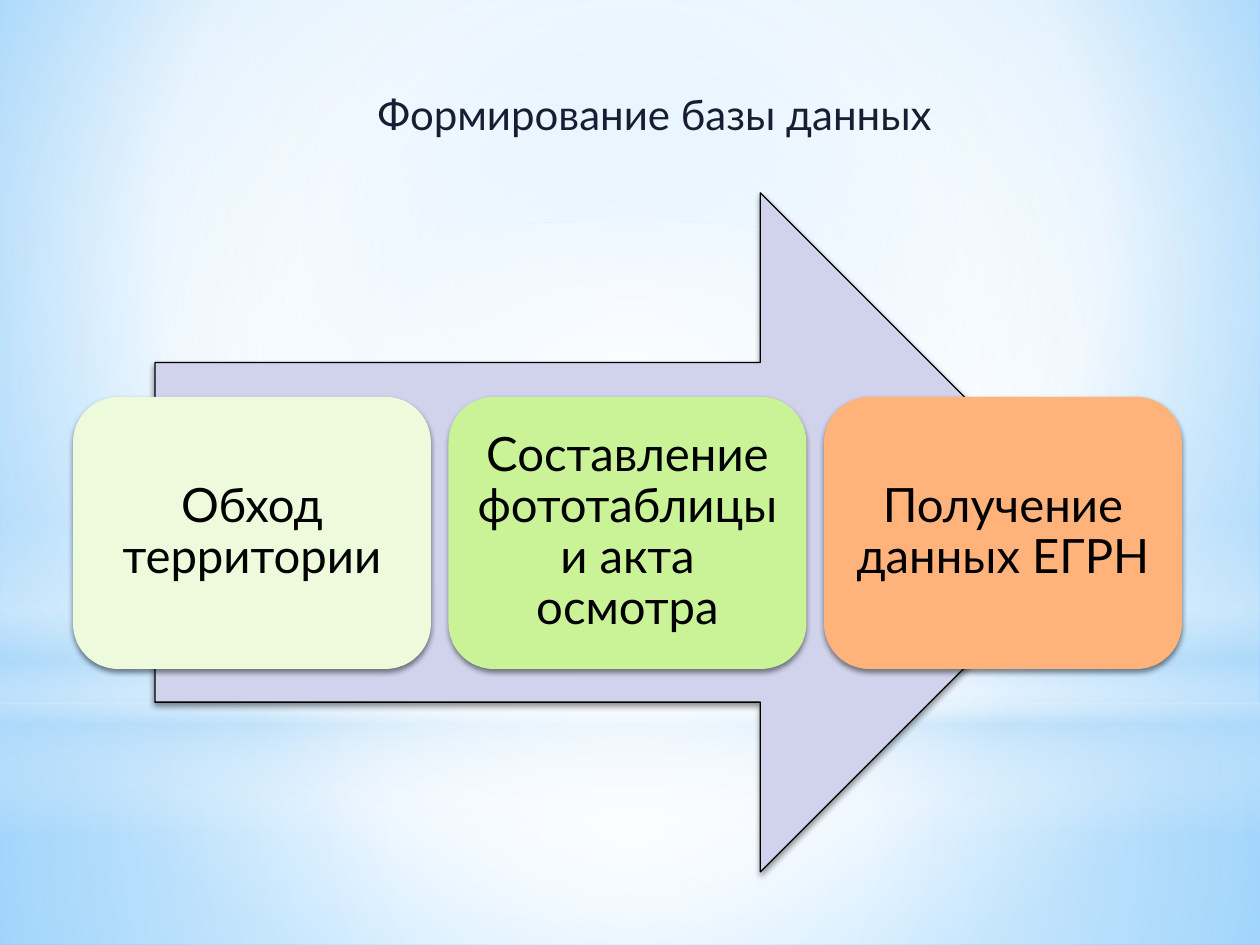
from pptx import Presentation
from pptx.dml.color import RGBColor
from pptx.enum.shapes import MSO_SHAPE
from pptx.enum.text import MSO_ANCHOR, PP_ALIGN
from pptx.oxml import parse_xml
from pptx.oxml.ns import nsdecls, qn
from pptx.util import Inches, Pt

RECT = MSO_SHAPE.RECTANGLE
OVAL = MSO_SHAPE.OVAL
ROUND = MSO_SHAPE.ROUNDED_RECTANGLE
ARROW = MSO_SHAPE.RIGHT_ARROW
CENTER = PP_ALIGN.CENTER
MIDDLE = MSO_ANCHOR.MIDDLE

BLACK = RGBColor(0x00, 0x00, 0x00)
WHITE = RGBColor(0xFF, 0xFF, 0xFF)
NAVY = RGBColor(0x19, 0x1D, 0x34)
LILAC = RGBColor(0xD0, 0xD3, 0xEB)
PALE = RGBColor(0xED, 0xFB, 0xDC)
LIME = RGBColor(0xCA, 0xF2, 0x97)
ORANGE = RGBColor(0xFF, 0xB3, 0x7A)
MIST = RGBColor(0xB4, 0xDC, 0xFA)
SKY = RGBColor(0x9E, 0xD5, 0xFF)
AZURE = RGBColor(0x5B, 0xB9, 0xFF)

MID = (50, 50, 50, 50)
BACK = [(0, SKY, 100), (60, WHITE, 100), (100, AZURE, 100)]
LAYERS = [
    (RECT, (0, 5.58, 10, 1.92), [(0, WHITE, 91), (37, WHITE, 76), (100, MIST, 79)], MID),
    (RECT, (0, 0, 10, 5.58), [(0, WHITE, 89), (48, WHITE, 62), (100, MIST, 79)], MID),
    (RECT, (0, 4.12, 10, 2.5), [(0, WHITE, 0), (29, WHITE, 30), (45, MIST, 40),
                                (55, WHITE, 26), (65, MIST, 60), (100, WHITE, 0)], None),
    (OVAL, (0, 1.75, 10, 5.58), [(0, WHITE, 100), (56, WHITE, 0)], MID),
]
STEPS = [
    ("Обход территории", PALE),
    ("Составление фототаблицы и акта осмотра", LIME),
    ("Получение данных ЕГРН", ORANGE),
]
LEFT, PITCH = 0.58, 2.98


class Deck:
    font = "Lato"
    shade = (
        '<a:outerShdw {} blurRad="{}" dist="{}" dir="5400000" algn="ctr" rotWithShape="0">'
        '<a:srgbClr val="{}"><a:alpha val="45000"/></a:srgbClr></a:outerShdw>'
    ).format(nsdecls("a"), Pt(3.1), Pt(1.8), BLACK)

    def __init__(self, slide):
        self.slide = slide

    def blend(self, fill, owner, stops, focus):
        fill.gradient()
        marks = "".join(
            f'<a:gs pos="{pos * 1000}"><a:srgbClr val="{color}">'
            f'<a:alpha val="{alpha * 1000}"/></a:srgbClr></a:gs>'
            for pos, color, alpha in stops
        )
        way = '<a:lin ang="5400000" scaled="0"/>'
        if focus:
            sides = " ".join(f'{side}="{num * 1000}"' for side, num in zip("ltrb", focus))
            way = f'<a:path path="circle"><a:fillToRect {sides}/></a:path>'
        old = owner.find(".//" + qn("a:gradFill"))
        new = parse_xml(
            f'<a:gradFill {nsdecls("a")} rotWithShape="1">'
            f'<a:gsLst>{marks}</a:gsLst>{way}</a:gradFill>'
        )
        old.getparent().replace(old, new)

    def backdrop(self, stops, focus):
        self.blend(self.slide.background.fill, self.slide.element, stops, focus)

    def shape(self, kind, box):
        item = self.slide.shapes.add_shape(kind, *map(Inches, box))
        item.shadow.inherit = False
        item.line.fill.background()
        return item

    def layer(self, kind, box, stops, focus):
        item = self.shape(kind, box)
        self.blend(item.fill, item.element, stops, focus)

    def block(self, kind, box, color):
        item = self.shape(kind, box)
        item.fill.solid()
        item.fill.fore_color.rgb = color
        item.element.find(".//" + qn("a:effectLst")).append(parse_xml(self.shade))
        return item

    def arrow(self, box, color):
        line = self.block(ARROW, box, color).line
        line.color.rgb = BLACK
        line.width = Pt(0.75)

    def label(self, item, text, size, color, inset, space):
        frame = item.text_frame
        side, top = map(Inches, inset)
        looks = {
            "word_wrap": True, "vertical_anchor": MIDDLE,
            "margin_left": side, "margin_right": side,
            "margin_top": top, "margin_bottom": top,
        }
        for name, value in looks.items():
            setattr(frame, name, value)
        par = frame.paragraphs[0]
        par.alignment = CENTER
        par.line_spacing = space
        run = par.add_run()
        run.text = text
        for name, value in {"name": self.font, "size": Pt(size), "bold": False}.items():
            setattr(run.font, name, value)
        run.font.color.rgb = color

    def card(self, box, text, color):
        item = self.block(ROUND, box, color)
        self.label(item, text, 27, BLACK, (0.11, 0.11), 0.9)

    def title(self, box, text):
        item = self.slide.shapes.title
        for name, value in zip(("left", "top", "width", "height"), box):
            setattr(item, name, Inches(value))
        self.label(item, text, 24, NAVY, (0.1, 0.05), 1.0)
        glow = parse_xml(f'<a:effectLst {nsdecls("a")}>{self.shade}</a:effectLst>')
        item.element.find(".//" + qn("a:rPr")).find(qn("a:solidFill")).addnext(glow)
        item.element.getparent().append(item.element)


def main():
    prs = Presentation()
    prs.slide_width, prs.slide_height = Inches(10), Inches(7.5)
    deck = Deck(prs.slides.add_slide(prs.slide_layouts[5]))
    deck.backdrop(BACK, (20, 10, 20, 60))
    for layer in LAYERS:
        deck.layer(*layer)
    deck.title((2.63, 0.56, 5.13, 0.68), "Формирование базы данных")
    deck.arrow((1.23, 1.53, 7.5, 5.39), LILAC)
    for num, (text, color) in enumerate(STEPS):
        deck.card((LEFT + num * PITCH, 3.15, 2.84, 2.16), text, color)
    prs.save("out.pptx")


if __name__ == "__main__":
    main()
